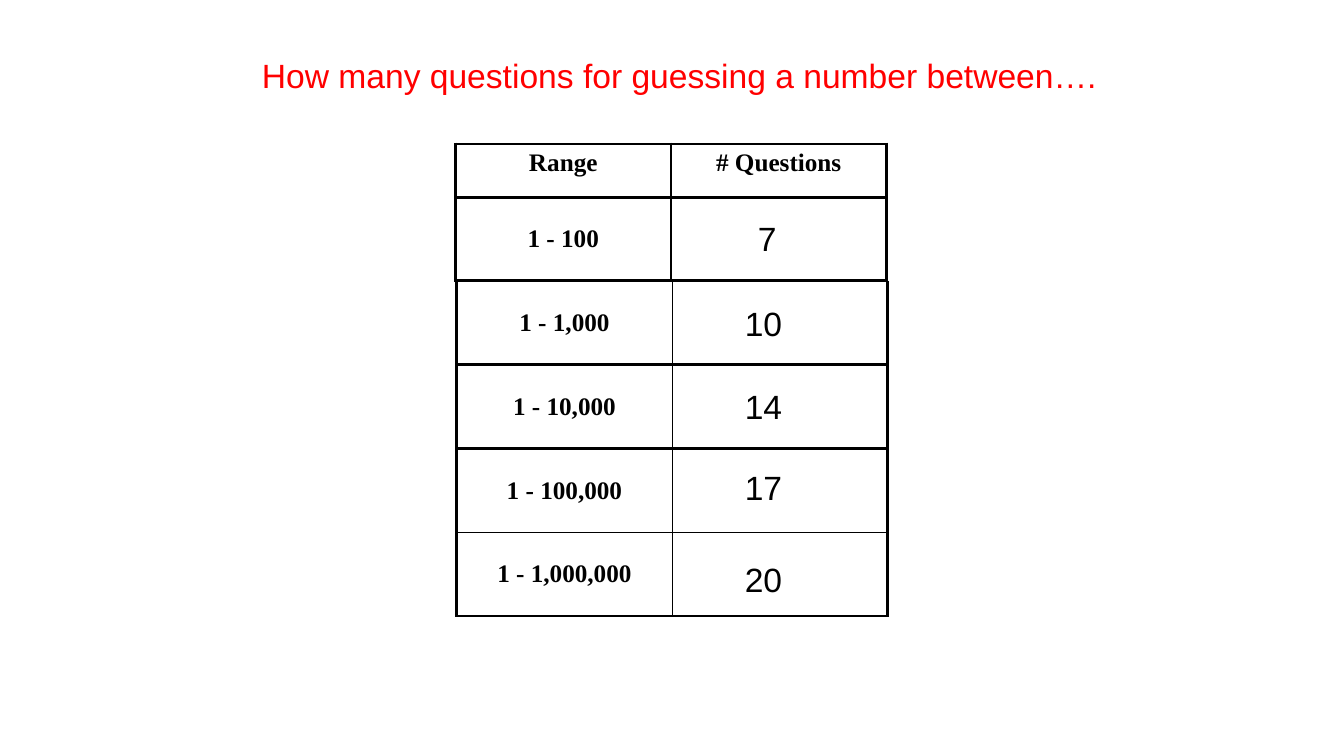
"""Build a slide on how many questions it takes to guess a number in a range."""
import pptx
import pptx.dml.color
import pptx.enum.text
import pptx.oxml
import pptx.oxml.ns
import pptx.util
from pptx.util import Cm

BLACK = pptx.dml.color.RGBColor(0x00, 0x00, 0x00)
RED = pptx.dml.color.RGBColor(0xFF, 0x00, 0x00)
THICK, THIN = 2.25, 1
COLUMN_WIDTH = 5.43
MIDDLE = pptx.enum.text.MSO_ANCHOR.MIDDLE
TOP = pptx.enum.text.MSO_ANCHOR.TOP


def add_border(cell, side, points):
    cell._tc.get_or_add_tcPr().append(pptx.oxml.parse_xml(
        f'<a:ln{side} {pptx.oxml.ns.nsdecls("a")} w="{pptx.util.Pt(points)}">'
        f'<a:solidFill><a:srgbClr val="{BLACK}"/></a:solidFill></a:ln{side}>'))


def add_line(left, top, width, text, color):
    box = slide.shapes.add_textbox(Cm(left), Cm(top), Cm(width), Cm(1.28))
    box.text_frame.word_wrap = True
    run = box.text_frame.paragraphs[0].add_run()
    run.text = text
    run.font.name = "Arial"
    run.font.size = pptx.util.Pt(24)
    run.font.color.rgb = color


presentation = pptx.Presentation()
presentation.slide_width = Cm(33.87)
presentation.slide_height = Cm(19.05)
slide = presentation.slides.add_slide(presentation.slide_layouts[6])

ranges = [
    (11.48, 3.63, 1.35, ["Range", "# Questions"], TOP, THICK, THICK),
    (11.48, 4.96, 2.1, ["1 - 100", ""], MIDDLE, THIN, THICK),
    (11.51, 7.09, 2.09, ["1 - 1,000", ""], MIDDLE, THIN, THICK),
    (11.51, 9.2, 2.09, ["1 - 10,000", ""], MIDDLE, THIN, THICK),
    (11.51, 11.33, 2.09, ["1 - 100,000", ""], MIDDLE, THIN, THIN),
    (11.51, 13.42, 2.1, ["1 - 1,000,000", ""], MIDDLE, THIN, THICK),
]
for left, top, height, labels, anchor, top_border, bottom_border in ranges:
    band = slide.shapes.add_table(
        1, 2, Cm(left), Cm(top), Cm(2 * COLUMN_WIDTH), Cm(height)).table
    band.first_row = False
    band.horz_banding = False
    for column, label in enumerate(labels):
        band.columns[column].width = Cm(COLUMN_WIDTH)
        cell = band.cell(0, column)
        add_border(cell, "L", THIN if column else THICK)
        add_border(cell, "R", THICK if column else THIN)
        add_border(cell, "T", top_border)
        add_border(cell, "B", bottom_border)
        cell.fill.background()
        cell.vertical_anchor = anchor
        if label:
            paragraph = cell.text_frame.paragraphs[0]
            paragraph.alignment = pptx.enum.text.PP_ALIGN.CENTER
            paragraph.space_before = pptx.util.Pt(3.6)
            run = paragraph.add_run()
            run.text = label
            run.font.name = "Times New Roman"
            run.font.size = pptx.util.Pt(18)
            run.font.bold = True
            run.font.color.rgb = BLACK

answers = [
    (18.85, 5.36, 1.47, "7"),
    (18.52, 7.52, 2.34, "10"),
    (18.52, 9.6, 1.8, "14"),
    (18.52, 11.63, 1.8, "17"),
    (18.52, 13.97, 1.8, "20"),
]
for left, top, width, question_count in answers:
    add_line(left, top, width, question_count, BLACK)

add_line(6.35, 1.27, 21.79, "How many questions for guessing a number between….", RED)

presentation.save("out.pptx")
